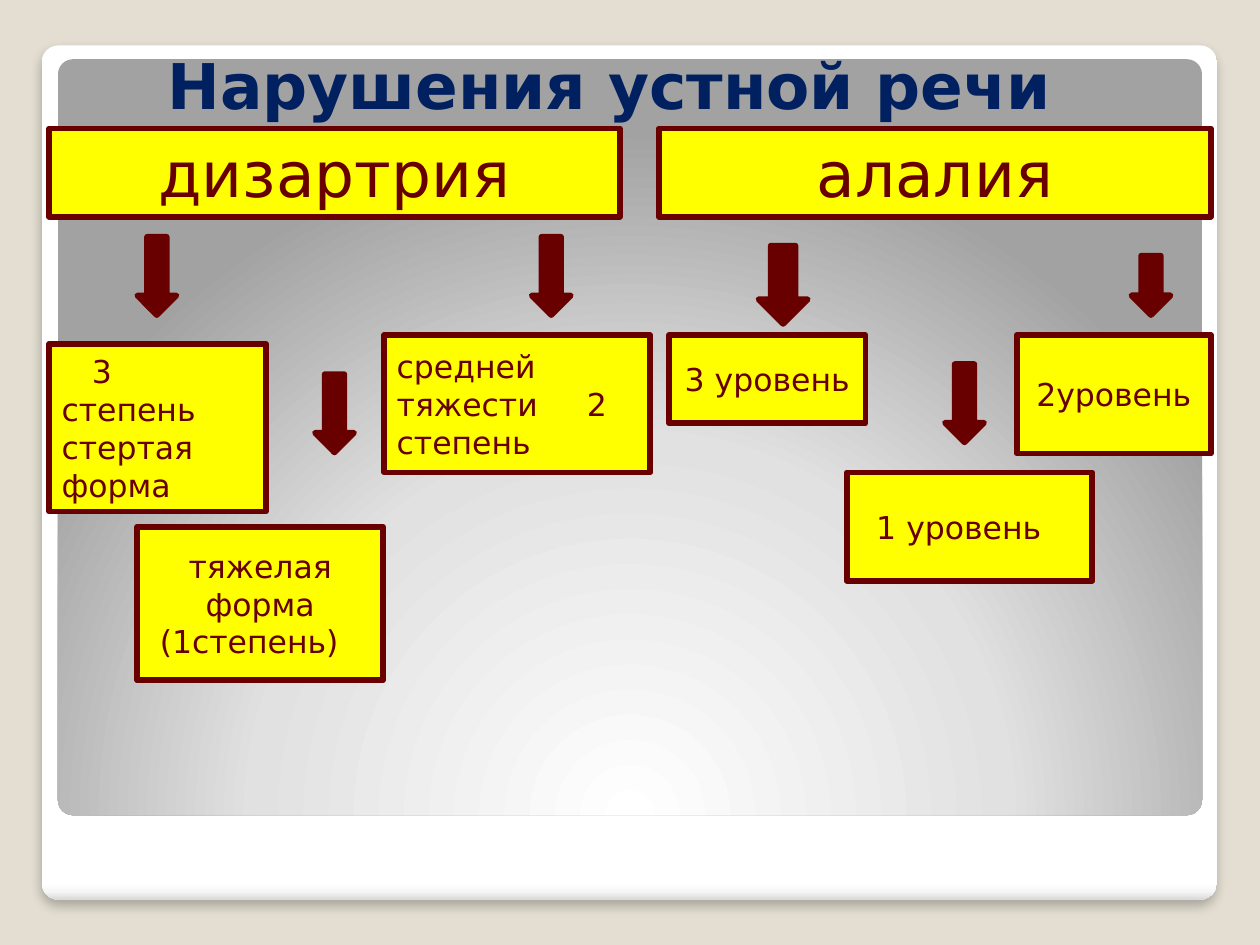
from dataclasses import dataclass

from lxml.etree import SubElement
from pptx import Presentation
from pptx.dml.color import RGBColor
from pptx.enum.shapes import MSO_SHAPE
from pptx.enum.text import MSO_ANCHOR, MSO_AUTO_SIZE, PP_ALIGN
from pptx.oxml import parse_xml
from pptx.oxml.ns import nsdecls, qn
from pptx.util import Inches, Pt


@dataclass(frozen=True)
class Theme:
    font: str = "DejaVu Sans"
    background: str = "E3DED1"
    card_line: str = "A4A4A4"
    title: str = "002060"
    box: str = "FFFF00"
    accent: str = "680000"
    heading_size: float = 36
    body_size: float = 18
    line_width: float = 3.35


theme = Theme()


def add_filled_shape(kind, left, top, width, height, fill):
    shape = slide.shapes.add_shape(
        kind, Inches(left), Inches(top), Inches(width), Inches(height))
    shape.shadow.inherit = False
    shape.fill.solid()
    shape.fill.fore_color.rgb = RGBColor.from_string(fill)
    shape.line.color.rgb = RGBColor.from_string(theme.accent)
    shape.line.width = Pt(theme.line_width)
    return shape


def add_run(paragraph, text, size, color, bold=False):
    run = paragraph.add_run()
    run.text = text
    run.font.name = theme.font
    run.font.size = Pt(size)
    run.font.bold = bold
    run.font.color.rgb = RGBColor.from_string(color)


presentation = Presentation()
presentation.slide_width = Inches(10)
presentation.slide_height = Inches(7.5)
slide = presentation.slides.add_slide(presentation.slide_layouts[5])
slide.background.fill.solid()
slide.background.fill.fore_color.rgb = RGBColor.from_string(theme.background)

# White card with a grey panel on it
panels = [
    ((0.33, 0.36, 9.33, 6.78),
     [(0, "FFFFFF"), (98, "FFFFFF"), (99, "F7F7F7"), (100, "DADADA")],
     '<a:lin ang="5400000" scaled="0"/>'),
    ((0.46, 0.47, 9.08, 6),
     [(0, "FFFFFF"), (55, "E1E1E1"), (100, "A2A2A2")],
     '<a:path path="circle">'
     '<a:fillToRect l="50000" t="175000" r="50000" b="-75000"/></a:path>'),
]
panel_shapes = []
for place, stops, direction in panels:
    panel = add_filled_shape(MSO_SHAPE.ROUNDED_RECTANGLE, *place, "FFFFFF")
    panel.adjustments[0] = 0.02
    panel.line.fill.background()
    stop_xml = "".join(
        f'<a:gs pos="{position * 1000}"><a:srgbClr val="{color}"/></a:gs>'
        for position, color in stops)
    properties = panel._element.spPr
    properties.replace(properties.find(qn("a:solidFill")), parse_xml(
        f'<a:gradFill {nsdecls("a")} rotWithShape="1">'
        f'<a:gsLst>{stop_xml}</a:gsLst>{direction}</a:gradFill>'))
    panel_shapes.append(panel)

card = panel_shapes[0]
card.line.color.rgb = RGBColor.from_string(theme.card_line)
card.line.width = Pt(0.16)
card._element.spPr.find(qn("a:effectLst")).append(parse_xml(
    f'<a:outerShdw {nsdecls("a")} blurRad="{Pt(6)}" dist="{Pt(4)}" '
    'dir="5400000" algn="tl" rotWithShape="0">'
    '<a:srgbClr val="000000"><a:alpha val="25000"/></a:srgbClr></a:outerShdw>'))

# Title, brought in front of the panels
title = slide.shapes.title
slide.shapes._spTree.append(title._element)
title.left, title.top = Inches(0.5), Inches(0.29)
title.width, title.height = Inches(9.11), Inches(0.73)
frame = title.text_frame
frame.auto_size = MSO_AUTO_SIZE.NONE
frame.word_wrap = True
frame.vertical_anchor = MSO_ANCHOR.BOTTOM
frame.margin_left = Inches(0.83)
frame.paragraphs[0].alignment = PP_ALIGN.LEFT
add_run(frame.paragraphs[0], "Нарушения устной речи",
        theme.heading_size, theme.title, bold=True)

arrows = [
    (1.09, 1.88, 0.31, 0.62), (2.5, 2.97, 0.31, 0.62),
    (4.22, 1.88, 0.31, 0.62), (6.02, 1.95, 0.39, 0.62),
    (7.5, 2.89, 0.31, 0.62), (8.98, 2.03, 0.31, 0.47),
]
for place in arrows:
    add_filled_shape(MSO_SHAPE.DOWN_ARROW, *place, theme.accent)

# Each paragraph: lines, alignment, first-line indent, tab stop
center, left = PP_ALIGN.CENTER, PP_ALIGN.LEFT
boxes = [
    ((0.39, 1.02, 4.53, 0.7), theme.heading_size, 0.1,
     [(["дизартрия"], center, 0, None)]),
    ((5.23, 1.02, 4.38, 0.7), theme.heading_size, 0.1,
     [(["алалия"], center, 0, None)]),
    ((0.39, 2.73, 1.72, 1.33), theme.body_size, 0.1,
     [(["3", "степень", "стертая", "форма"], left, 0.24, None)]),
    ((1.09, 4.18, 1.95, 1.22), theme.body_size, 0.1,
     [(["тяжелая", "форма"], center, 0, None),
      (["(1степень)"], left, 0.08, None)]),
    ((3.05, 2.66, 2.11, 1.09), theme.body_size, 0.1,
     [(["средней", "тяжести\t2", "степень"], left, 0, 1.51)]),
    ((6.72, 3.75, 1.95, 0.86), theme.body_size, 0.27,
     [(["1 уровень"], center, 0, None)]),
    ((5.31, 2.66, 1.56, 0.7), theme.body_size, 0.1,
     [(["3 уровень"], center, 0, None)]),
    ((8.07, 2.66, 1.54, 0.94), theme.body_size, 0.1,
     [(["2уровень"], center, 0, None)]),
]
for place, size, right_margin, paragraphs in boxes:
    box = add_filled_shape(MSO_SHAPE.RECTANGLE, *place, theme.box)
    frame = box.text_frame
    frame.word_wrap = True
    frame.vertical_anchor = MSO_ANCHOR.MIDDLE
    frame.margin_right = Inches(right_margin)
    for number, (lines, alignment, indent, tab_stop) in enumerate(paragraphs):
        paragraph = frame.add_paragraph() if number else frame.paragraphs[0]
        paragraph.alignment = alignment
        properties = paragraph._p.get_or_add_pPr()
        if indent:
            properties.set("indent", str(Inches(indent)))
        if tab_stop:
            tabs = SubElement(properties, qn("a:tabLst"))
            SubElement(tabs, qn("a:tab"), pos=str(Inches(tab_stop)), algn="l")
        for index, line in enumerate(lines):
            if index:
                paragraph.add_line_break()
            add_run(paragraph, line, size, theme.accent)

presentation.save("out.pptx")
